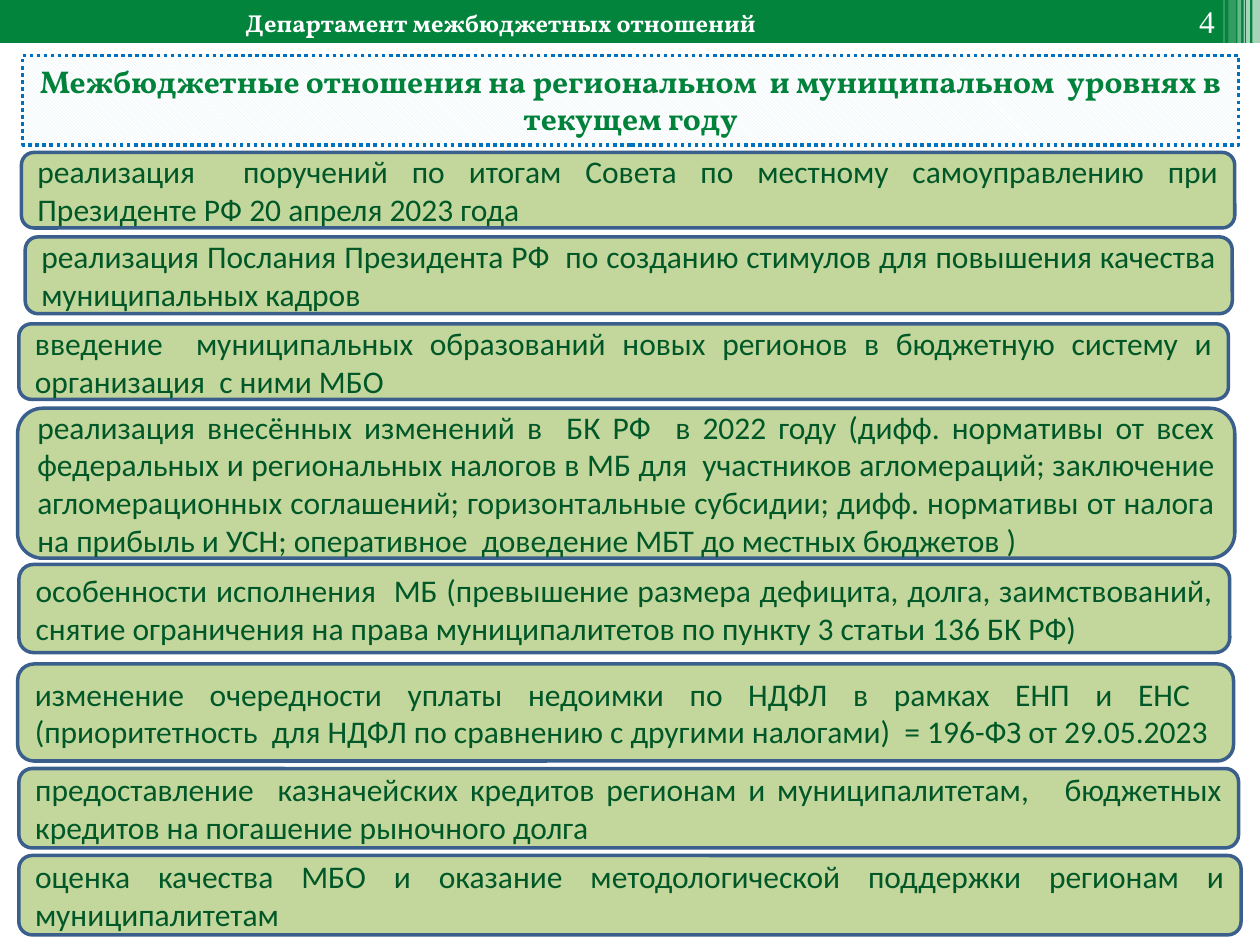
from typing import NamedTuple

from lxml import etree
from pptx import Presentation
from pptx.dml.color import RGBColor
from pptx.enum import dml, shapes, text
from pptx.oxml import ns
from pptx.util import Emu, Pt

PX = 9144  # 100 px to the inch

GREEN = RGBColor(0x02, 0x84, 0x3D)
TITLE = RGBColor(0x00, 0x82, 0x3B)
INK = RGBColor(0x00, 0x58, 0x28)
WHITE = RGBColor(0xFF, 0xFF, 0xFF)
PALE = RGBColor(0xDB, 0xEE, 0xF4)
BLUE = RGBColor(0x00, 0x70, 0xC0)
OLIVE = RGBColor(0xC3, 0xD6, 0x9B)
NAVY = RGBColor(0x3A, 0x5F, 0x8C)

RECT = shapes.MSO_SHAPE.RECTANGLE
ROUND = shapes.MSO_SHAPE.ROUNDED_RECTANGLE
CENTER, JUSTIFY = text.PP_ALIGN.CENTER, text.PP_ALIGN.JUSTIFY
TOP, MIDDLE = text.MSO_ANCHOR.TOP, text.MSO_ANCHOR.MIDDLE


class Box(NamedTuple):
    x: int
    y: int
    w: int
    h: int


class Style(NamedTuple):
    font: str
    size: int
    color: RGBColor
    bold: bool
    align: text.PP_ALIGN
    anchor: text.MSO_ANCHOR


class Stripe(NamedTuple):
    x: int
    w: int
    alpha: int


class Item(NamedTuple):
    box: Box
    words: str


HEAD = Style("Vollkorn", 14, WHITE, True, JUSTIFY, MIDDLE)
PAGE = Style("Times New Roman", 18, WHITE, False, CENTER, TOP)
NAME = Style("Vollkorn", 18, TITLE, True, CENTER, TOP)
BODY = Style("Calibri", 18, INK, False, JUSTIFY, MIDDLE)

BAR = 34
STRIPES = [
    Stripe(994, 6, 65),
    Stripe(989, 3, 65),
    Stripe(987, 1, 60),
    Stripe(982, 3, 40),
    Stripe(975, 6, 20),
    Stripe(971, 1, 30),
]

ITEMS = [
    Item(Box(17, 121, 963, 60),
         "реализация  поручений по итогам Совета по местному самоуправлению "
         "при Президенте РФ 20 апреля 2023 года"),
    Item(Box(20, 188, 958, 61),
         "реализация Послания Президента РФ  по созданию стимулов для "
         "повышения качества муниципальных кадров"),
    Item(Box(15, 257, 960, 60),
         "введение  муниципальных образований новых регионов в бюджетную "
         "систему и организация  с ними МБО"),
    Item(Box(14, 324, 966, 119),
         "реализация внесённых изменений в  БК РФ  в 2022 году (дифф. "
         "нормативы от всех федеральных и региональных налогов в МБ для  "
         "участников агломераций; заключение агломерационных соглашений; "
         "горизонтальные субсидии; дифф. нормативы от налога на прибыль и "
         "УСН; оперативное  доведение МБТ до местных бюджетов )"),
    Item(Box(15, 448, 961, 70),
         "особенности исполнения  МБ (превышение размера дефицита, долга, "
         "заимствований, снятие ограничения на права муниципалитетов по "
         "пункту 3 статьи 136 БК РФ)"),
    Item(Box(14, 527, 965, 77),
         "изменение очередности уплаты недоимки по НДФЛ в рамках ЕНП и ЕНС  "
         "(приоритетность  для НДФЛ по сравнению с другими налогами)  = "
         "196-ФЗ от 29.05.2023"),
    Item(Box(15, 610, 968, 63),
         "предоставление  казначейских кредитов регионам и муниципалитетам,   "
         "бюджетных кредитов на погашение рыночного долга"),
    Item(Box(15, 679, 970, 63),
         "оценка качества МБО и оказание методологической поддержки регионам "
         "и муниципалитетам"),
]


def scale(box: Box) -> list[Emu]:
    return [Emu(n * PX) for n in box]


def write(shape, words: str, style: Style) -> None:
    frame = shape.text_frame
    frame.word_wrap = True
    frame.vertical_anchor = style.anchor
    frame.text = words
    para = frame.paragraphs[0]
    para.alignment = style.align
    font = para.runs[0].font
    font.name, font.size, font.bold = style.font, Pt(style.size), style.bold
    font.color.rgb = style.color


def label(slide, box: Box, words: str, style: Style):
    shape = slide.shapes.add_textbox(*scale(box))
    write(shape, words, style)
    return shape


def block(slide, kind: shapes.MSO_SHAPE, box: Box):
    shape = slide.shapes.add_shape(kind, *scale(box))
    shape.shadow.inherit = False
    return shape


def band(slide, box: Box, color: RGBColor, alpha: int = 100) -> None:
    shape = block(slide, RECT, box)
    shape.fill.solid()
    shape.fill.fore_color.rgb = color
    shape.line.fill.background()
    if alpha < 100:
        tint = shape.fill._xPr.find(".//" + ns.qn("a:srgbClr"))
        etree.SubElement(tint, ns.qn("a:alpha")).set("val", str(alpha * 1000))


def edge(shape, color: RGBColor) -> None:
    shape.line.color.rgb = color
    shape.line.width = Pt(2)


def panel(slide, item: Item) -> None:
    shape = block(slide, ROUND, item.box)
    shape.fill.solid()
    shape.fill.fore_color.rgb = OLIVE
    edge(shape, NAVY)
    write(shape, item.words, BODY)


def title(slide, box: Box, words: str) -> None:
    shape = block(slide, RECT, box)
    shape.fill.patterned()
    shape.fill.pattern = dml.MSO_PATTERN.DARK_DOWNWARD_DIAGONAL
    shape.fill.fore_color.rgb = PALE
    shape.fill.back_color.rgb = WHITE
    edge(shape, BLUE)
    shape.line.dash_style = dml.MSO_LINE.ROUND_DOT
    write(shape, words, NAME)


def main() -> None:
    deck = Presentation()
    deck.slide_width, deck.slide_height = Emu(1000 * PX), Emu(750 * PX)
    slide = deck.slides.add_slide(deck.slide_layouts[6])

    # Header bar with fading stripes
    band(slide, Box(0, 0, 1000, BAR), GREEN)
    for stripe in STRIPES:
        band(slide, Box(stripe.x, 0, stripe.w, BAR), WHITE, stripe.alpha)

    # Header text and page number
    label(slide, Box(185, 1, 630, 34), "Департамент межбюджетных отношений", HEAD)
    frame = label(slide, Box(934, 2, 48, 30), "4", PAGE).text_frame
    frame.margin_left = frame.margin_right = 0
    frame.margin_top = frame.margin_bottom = 0

    # Title
    title(slide, Box(18, 44, 965, 71),
          "Межбюджетные отношения на региональном  и муниципальном  уровнях "
          "в текущем году")

    # List of measures
    for item in ITEMS:
        panel(slide, item)

    deck.save("out.pptx")


if __name__ == "__main__":
    main()
